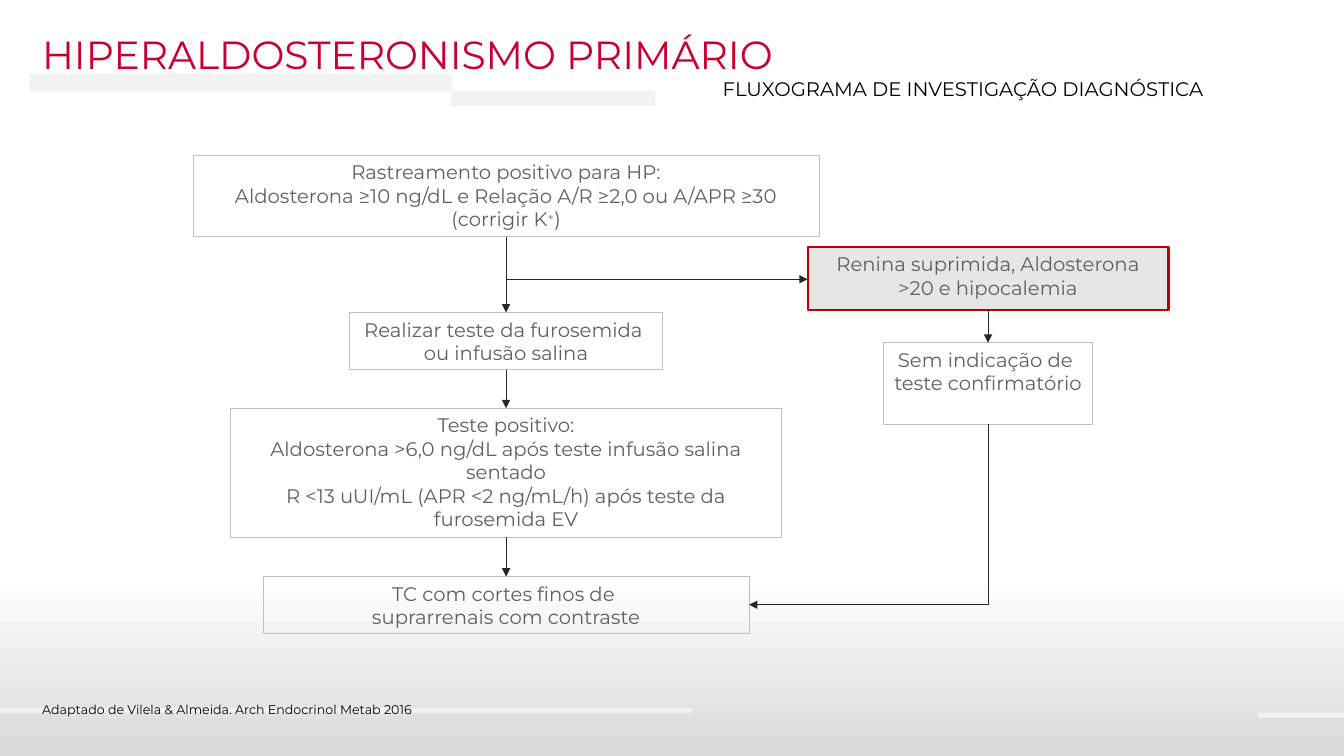
"""Build the diagnostic flowchart slide for primary hyperaldosteronism."""
from lxml import etree
from pptx import Presentation
from pptx.dml.color import RGBColor
from pptx.enum.shapes import MSO_CONNECTOR, MSO_SHAPE
from pptx.enum.text import MSO_ANCHOR, PP_ALIGN
from pptx.oxml.ns import qn
from pptx.util import Inches, Pt

RECTANGLE = MSO_SHAPE.RECTANGLE
STRAIGHT, ELBOW = MSO_CONNECTOR.STRAIGHT, MSO_CONNECTOR.ELBOW
TOP, LEFT, CENTER = MSO_ANCHOR.TOP, PP_ALIGN.LEFT, PP_ALIGN.CENTER
BOTTOM_SIDE, TOP_SIDE = 2, 0
MAIN_X, SIDE_X = 5.02, 9.8


def color(value):
    return RGBColor.from_string(value)


def write(shape, paragraphs, size, text_color, alignment, wrap=True):
    frame = shape.text_frame
    frame.word_wrap = wrap
    frame.vertical_anchor = TOP
    for index, runs in enumerate(paragraphs):
        paragraph = frame.add_paragraph() if index else frame.paragraphs[0]
        paragraph.alignment = alignment
        for text in runs:
            run = paragraph.add_run()
            run.text = text
            for name, value in {"name": "Montserrat", "size": Pt(size)}.items():
                setattr(run.font, name, value)
            run.font.color.rgb = color(text_color)
            if text == "+":
                run.font._element.set("baseline", "30000")


presentation = Presentation()
presentation.slide_width, presentation.slide_height = Inches(13.33), Inches(7.5)
slide = presentation.slides.add_slide(presentation.slide_layouts[6])
shapes = slide.shapes

backdrop = shapes.add_shape(RECTANGLE, 0, 0, Inches(13.33), Inches(7.5))
backdrop.shadow.inherit = False
backdrop.line.fill.background()
backdrop.fill.gradient()
backdrop.fill.gradient_angle = 270
for stop, (position, value) in zip(backdrop.fill.gradient_stops, [(0.76, "FFFFFF"), (1, "D9D9D9")]):
    stop.position = position
    stop.color.rgb = color(value)

bars = [(0.29, 0.73, 4.19, 0.18), (4.47, 0.9, 2.03, 0.15), (0, 7.02, 6.87, 0.05), (12.48, 7.07, 0.85, 0.05)]
for place in bars:
    bar = shapes.add_shape(RECTANGLE, *map(Inches, place))
    bar.shadow.inherit = False
    bar.fill.solid()
    bar.fill.fore_color.rgb = color("F2F2F2")
    bar.line.fill.background()

labels = [
    ((0.32, 0.25, 11.46, 0.57), "HIPERALDOSTERONISMO PRIMÁRIO", 28, "C80030", True),
    ((7.07, 0.71, 5.46, 0.34), "FLUXOGRAMA DE INVESTIGAÇÃO DIAGNÓSTICA", 14, "000000", True),
    ((0.32, 6.91, 3.96, 0.25), "Adaptado de Vilela & Almeida. Arch Endocrinol Metab 2016", 9, "000000", False),
]
for place, text, size, text_color, wrap in labels:
    write(shapes.add_textbox(*map(Inches, place)), [[text]], size, text_color, LEFT, wrap)

steps = {
    "screening": (MAIN_X, 1.54, 6.21, 0.81, [
        ["Rastreamento positivo para HP:"],
        ["Aldosterona ≥10 ng/dL e Relação A/R ≥2,0 ou A/APR ≥30 (corrigir K", "+", ")"]]),
    "test": (MAIN_X, 3.1, 3.1, 0.57, [["Realizar teste da furosemida "], ["ou infusão salina"]]),
    "positive": (MAIN_X, 4.05, 5.47, 1.28, [
        ["Teste positivo:"],
        ["Aldosterona >6,0 ng/dL após teste infusão salina sentado"],
        ["R <13 uUI/mL (APR <2 ng/mL/h) após teste da furosemida EV"]]),
    "tomography": (MAIN_X, 5.72, 4.82, 0.57, [["TC com cortes finos de "], ["suprarrenais com contraste"]]),
    "suppressed": (SIDE_X, 2.45, 3.58, 0.63, [["Renina suprimida, Aldosterona >20 e hipocalemia"]]),
    "exempt": (SIDE_X, 3.4, 2.08, 0.81, [["Sem indicação de "], ["teste confirmatório"]]),
}
boxes = {}
for name, (center, top, width, height, paragraphs) in steps.items():
    box = shapes.add_shape(RECTANGLE, *map(Inches, (center - width / 2, top, width, height)))
    box.shadow.inherit = False
    highlighted = name == "suppressed"
    if highlighted:
        box.fill.solid()
        box.fill.fore_color.rgb = color("E6E6E6")
    else:
        box.fill.background()
    box.line.color.rgb = color("C00000" if highlighted else "BFBFBF")
    box.line.width = Pt(1.5 if highlighted else 0.75)
    write(box, paragraphs, 14, "606060", CENTER)
    boxes[name] = box

arrows = []
for start, end in [("screening", "test"), ("test", "positive"), ("positive", "tomography"), ("suppressed", "exempt")]:
    arrow = shapes.add_connector(STRAIGHT, 0, 0, 0, 0)
    arrow.begin_connect(boxes[start], BOTTOM_SIDE)
    arrow.end_connect(boxes[end], TOP_SIDE)
    arrows.append(arrow)

for start_x, start_y, end_x, end_y in [(MAIN_X, 2.35, 8.01, 2.77), (SIDE_X, 4.21, 7.43, 6)]:
    direction = 1 if end_x > start_x else -1
    middle_x, middle_y = (start_x + end_x) / 2, (start_y + end_y) / 2
    half_drop, half_run = (end_y - start_y) / 2, abs(end_x - start_x) / 2
    arrow = shapes.add_connector(ELBOW, *map(Inches, (
        middle_x + direction * half_drop, middle_y - half_run,
        middle_x - direction * half_drop, middle_y + half_run)))
    properties = arrow._element.spPr
    properties.find(qn("a:xfrm")).set("rot", str((180 + 90 * direction) * 60000))
    properties.find(qn("a:prstGeom")).set("prst", "bentConnector2")
    arrows.append(arrow)

for arrow in arrows:
    arrow.line.color.rgb = color("262626")
    arrow.line.width = Pt(0.5)
    etree.SubElement(arrow.line._get_or_add_ln(), qn("a:tailEnd"), type="triangle")
    etree.SubElement(arrow._element.spPr, qn("a:effectLst"))

presentation.save("out.pptx")
